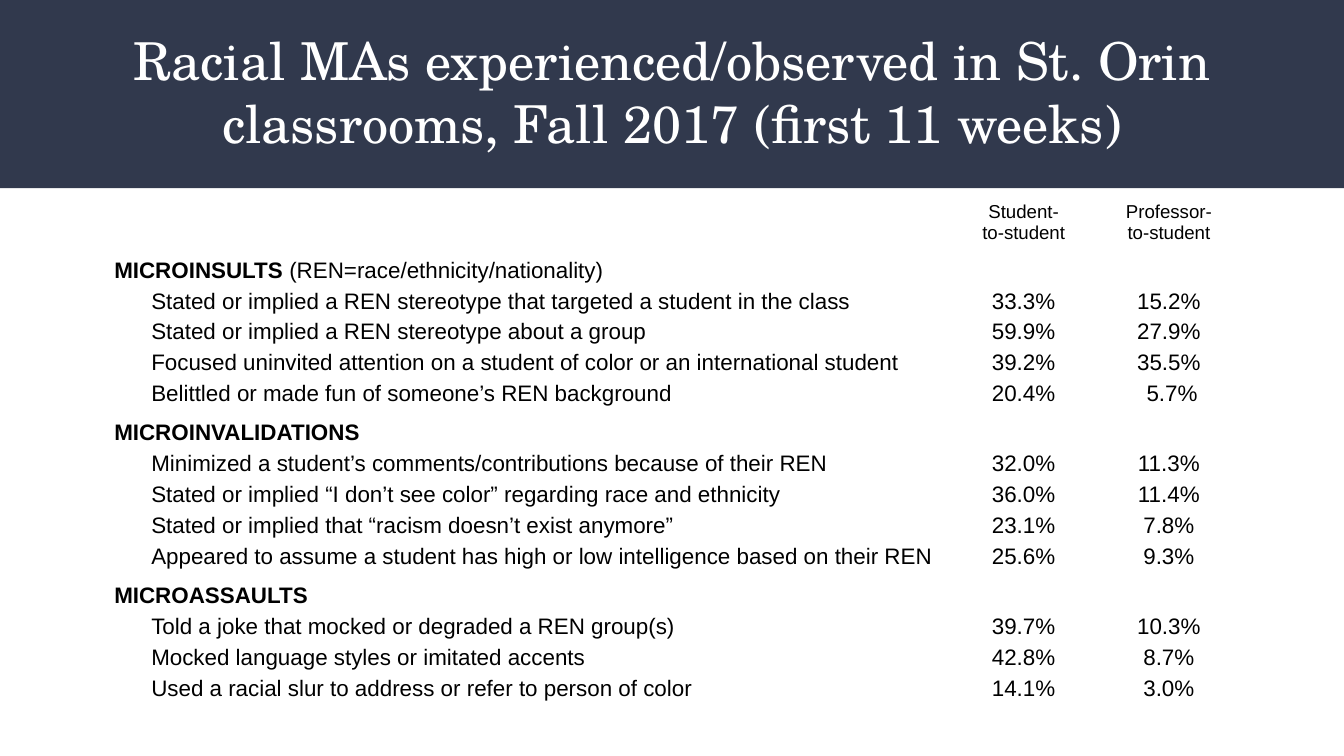
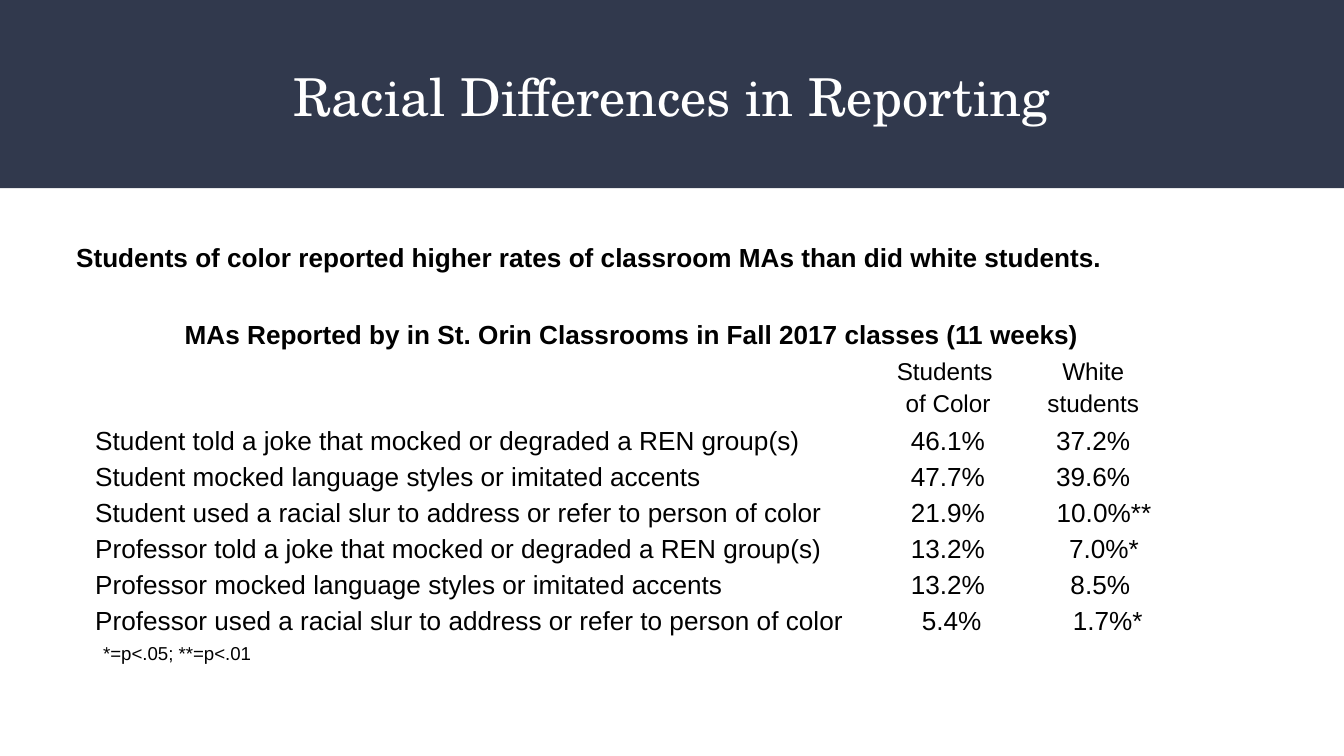
from lxml.etree import SubElement
from pptx import Presentation
from pptx.dml.color import RGBColor
from pptx.enum.shapes import MSO_SHAPE as Shape
from pptx.enum.text import MSO_ANCHOR as Anchor, PP_ALIGN as Align
from pptx.oxml.ns import qn
from pptx.util import Cm, Pt

NAVY = RGBColor(0x31, 0x39, 0x4D)
WHITE = RGBColor(0xFF, 0xFF, 0xFF)
BLACK = RGBColor(0x00, 0x00, 0x00)
WIDTH, HEIGHT = 25.4, 14.29

CLASSROOM_ROWS = [
    [[("MICROINSULTS ", True), ("(REN=race/ethnicity/nationality)", False)]],
    ["Stated or implied a REN stereotype that targeted a student in the class", "33.3%", "15.2%"],
    ["Stated or implied a REN stereotype about a group", "59.9%", "27.9%"],
    ["Focused uninvited attention on a student of color or an international student", "39.2%", "35.5%"],
    ["Belittled or made fun of someone’s REN background", "20.4%", ("5.7%", 0.12)],
    [[("MICROINVALIDATIONS", True)]],
    ["Minimized a student’s comments/contributions because of their REN", "32.0%", "11.3%"],
    ["Stated or implied “I don’t see color” regarding race and ethnicity", "36.0%", "11.4%"],
    ["Stated or implied that “racism doesn’t exist anymore”", "23.1%", "7.8%"],
    ["Appeared to assume a student has high or low intelligence based on their REN", "25.6%", "9.3%"],
    [[("MICROASSAULTS", True)]],
    ["Told a joke that mocked or degraded a REN group(s)", "39.7%", "10.3%"],
    ["Mocked language styles or imitated accents", "42.8%", "8.7%"],
    ["Used a racial slur to address or refer to person of color", "14.1%", "3.0%"],
]

REPORTING_ROWS = [
    ["Student told a joke that mocked or degraded a REN group(s)", "46.1%", "37.2%"],
    ["Student mocked language styles or imitated accents", "47.7%", "39.6%"],
    ["Student used a racial slur to address or refer to person of color", "21.9%", ("10.0%**", 0.41)],
    ["Professor told a joke that mocked or degraded a REN group(s)", "13.2%", ("7.0%*", 0.41)],
    ["Professor mocked language styles or imitated accents", "13.2%", ("8.5%", 0.27)],
    ["Professor used a racial slur to address or refer to person of color", ("5.4%", 0.14), ("1.7%*", 0.55)],
]


class Deck:
    body_font = "Arial"
    title_font = "TeX Gyre Schola"

    def __init__(self):
        self.deck = Presentation()
        self.deck.slide_width, self.deck.slide_height = Cm(WIDTH), Cm(HEIGHT)
        self.page = None

    def add_page(self, title, title_top, title_height):
        self.page = self.deck.slides.add_slide(self.deck.slide_layouts[6])
        band = self.page.shapes.add_shape(Shape.RECTANGLE, 0, 0, Cm(WIDTH), Cm(3.56))
        band.shadow.inherit = False
        band.fill.solid()
        band.fill.fore_color.rgb = NAVY
        band.line.fill.background()
        frame = self.add_box(0.86, title_top, 23.67, title_height)
        frame.margin_top = frame.margin_bottom = Cm(0.25)
        para = frame.paragraphs[0]
        para.alignment = Align.CENTER
        self.add_span(para, title, 28, color=WHITE, font=self.title_font)

    def add_box(self, left, top, width, height, wrap=True):
        box = self.page.shapes.add_textbox(Cm(left), Cm(top), Cm(width), Cm(height))
        frame = box.text_frame
        frame.word_wrap = wrap
        frame.vertical_anchor = Anchor.TOP
        return frame

    def add_span(self, para, text, size, bold=False, color=BLACK, font=body_font):
        span = para.add_run()
        span.text = text
        span.font.size = Pt(size)
        span.font.bold = bold
        span.font.name = font
        span.font.color.rgb = color

    def add_table(self, left, top, widths, heights, inset):
        frame = self.page.shapes.add_table(
            len(heights), len(widths), Cm(left), Cm(top), Cm(sum(widths)), Cm(sum(heights)))
        table = frame.table
        table.first_row = table.horz_banding = False
        for column, width in zip(table.columns, widths):
            column.width = Cm(width)
        for row, height in zip(table.rows, heights):
            row.height = Cm(height)
        for cell in table.iter_cells():
            cell.margin_left = cell.margin_right = Cm(inset)
            cell.margin_top = cell.margin_bottom = 0
            self.clear_borders(cell)
            cell.fill.background()
            end = SubElement(cell.text_frame.paragraphs[0]._p, qn("a:endParaRPr"))
            end.set("sz", "1000")
        return table

    def clear_borders(self, cell):
        properties = cell._tc.get_or_add_tcPr()
        for side in ("a:lnL", "a:lnR", "a:lnT", "a:lnB"):
            line = SubElement(properties, qn(side), w=str(Pt(0.75)))
            color = SubElement(SubElement(line, qn("a:solidFill")), qn("a:srgbClr"), val=str(BLACK))
            SubElement(color, qn("a:alpha"), val="0")

    def fill_cell(self, cell, lines, size, align=Align.LEFT, spacing=1.15):
        frame = cell.text_frame
        for index, spans in enumerate(lines):
            para = frame.add_paragraph() if index else frame.paragraphs[0]
            para.alignment = align
            para.line_spacing = spacing
            for text, bold in spans:
                self.add_span(para, text, size, bold)

    def fill_header(self, table, headings, size, spacing):
        for column, lines in enumerate(headings, 1):
            self.fill_cell(table.cell(0, column), [[(line, False)] for line in lines],
                           size, Align.CENTER, spacing)

    def fill_rows(self, table, rows, size, label_indent=0):
        for index, (label, *values) in enumerate(rows, 1):
            cell = table.cell(index, 0)
            if values:
                cell.margin_left += Cm(label_indent)
                label = [(label, False)]
            elif index > 1:
                cell.margin_top = Cm(0.15)
            self.fill_cell(cell, [label], size)
            for column, value in enumerate(values, 1):
                text, shift = value if isinstance(value, tuple) else (value, 0)
                cell = table.cell(index, column)
                cell.margin_left += Cm(shift)
                self.fill_cell(cell, [[(text, False)]], size, Align.CENTER)

    def save(self):
        self.deck.save("out.pptx")


def add_classroom_page(deck):
    deck.add_page("Racial MAs experienced/observed in St. Orin classrooms, Fall 2017 (first 11 weeks)",
                  0.28, 2.84)
    heights = [0.99] + [0.54 if len(row) > 1 or not index else 0.69
                        for index, row in enumerate(CLASSROOM_ROWS)]
    table = deck.add_table(1.98, 3.81, [15.93, 2.87, 2.62], heights, 0.18)
    deck.fill_header(table, [["Student-", "to-student"], ["Professor-", "to-student"]], 10, 1.0)
    deck.fill_rows(table, CLASSROOM_ROWS, 12, 0.7)


def add_reporting_page(deck):
    deck.add_page("Racial Differences in Reporting", 0.97, 2.16)
    frame = deck.add_box(1.19, 3.81, 23.34, 2.9)
    frame.margin_top = Cm(0.76)
    deck.add_span(frame.paragraphs[0],
                  "Students of color reported higher rates of classroom MAs than did white students.",
                  14, True)
    para = frame.add_paragraph()
    para.space_before = Pt(24.5)
    para._p.get_or_add_pPr().set("marL", str(Cm(2.05)))
    deck.add_span(para, "MAs Reported by in St. Orin Classrooms in Fall 2017 classes (11 weeks)", 14, True)

    heights = [1.26] + [0.68] * len(REPORTING_ROWS)
    table = deck.add_table(1.7, 6.71, [14.88, 2.67, 2.82], heights, 0.1)
    deck.fill_header(table, [["Students ", "of Color"], ["White students"]], 13, 1.15)
    deck.fill_rows(table, REPORTING_ROWS, 14)

    note = deck.add_box(1.7, 12.01, 3.33, 0.69, wrap=False)
    deck.add_span(note.paragraphs[0], "*=p<.05; **=p<.01", 10)


def main():
    deck = Deck()
    add_classroom_page(deck)
    add_reporting_page(deck)
    deck.save()


if __name__ == "__main__":
    main()
